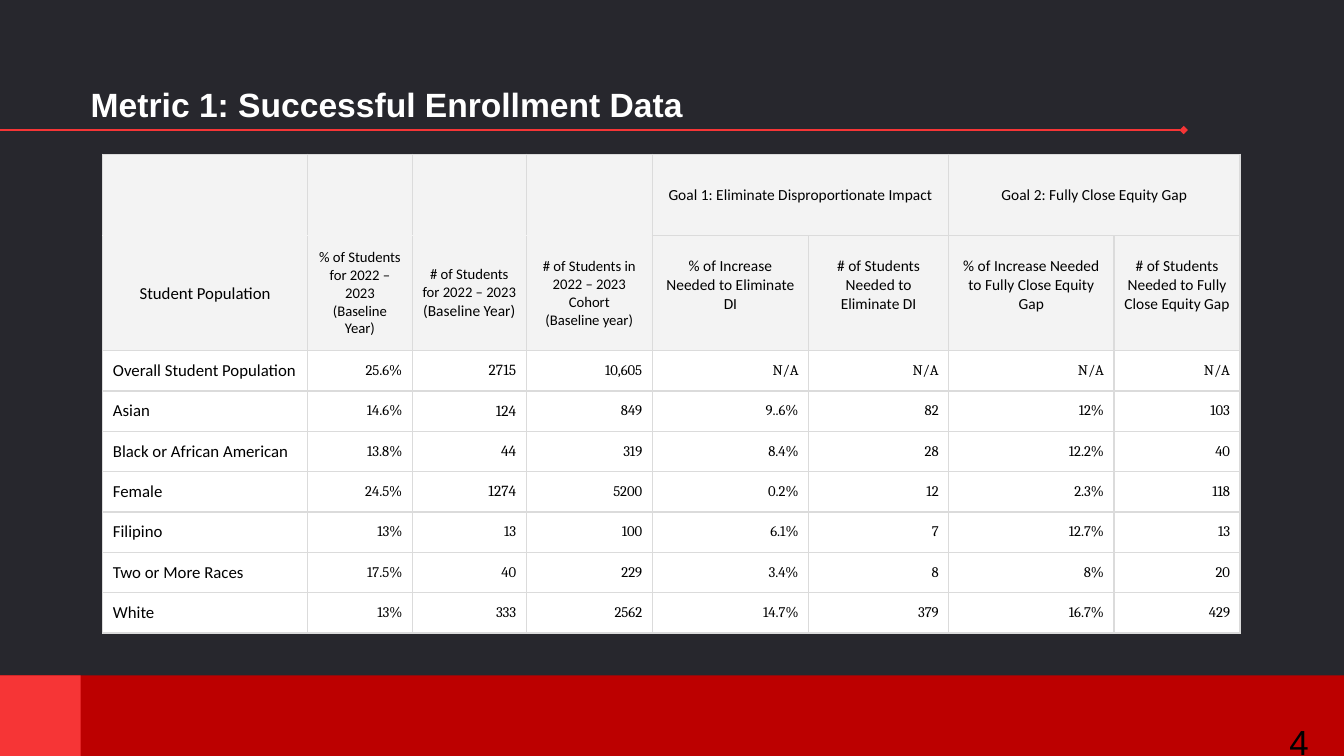
from lxml.etree import SubElement
from pptx import Presentation
from pptx.dml.color import RGBColor
from pptx.enum.shapes import MSO_CONNECTOR, MSO_SHAPE
from pptx.enum.text import MSO_ANCHOR, MSO_AUTO_SIZE, PP_ALIGN
from pptx.oxml.ns import qn
from pptx.util import Inches, Pt

SLIDE_COLUMNS, SLIDE_ROWS = 133.3, 75
FOOTER_TOP, FOOTER_ROWS = 67, 8
RULE_ROW = 12.9
TABLE_LEFT, TABLE_TOP = 10.2, 15.3
COLUMN_WIDTHS = [20.3, 10.4, 11.3, 12.5, 15.5, 13.9, 16.4, 12.5]
ROW_HEIGHTS = [8.1, 11.4] + [4] * 7
FIRST_GOAL_COLUMN = 4
HEADER_FILL, BORDER = "F3F3F3", "DBDBDB"

GOALS = {
    4: "Goal 1: Eliminate Disproportionate Impact",
    6: "Goal 2: Fully Close Equity Gap",
}
HEADERS = [
    [("Student Population", 12)],
    [("% of Students for 2022 – 2023 (Baseline Year)", 10.5)],
    [("# of Students for 2022 – 2023", 10.5), ("(Baseline Year)", 11)],
    [("# of Students in 2022 – 2023 Cohort", 10.5), ("(Baseline year)", 10.5)],
    [("% of Increase Needed to Eliminate DI", 11)],
    [("# of Students Needed to Eliminate DI", 11)],
    [("% of Increase Needed to Fully Close Equity Gap", 11)],
    [("# of Students Needed to Fully Close Equity Gap", 11)],
]
POPULATIONS = [
    ["Overall Student Population", "25.6%", "2715", "10,605", "N/A", "N/A", "N/A", "N/A"],
    ["Asian", "14.6%", "124", "849", "9..6%", "82", "12%", "103"],
    ["Black or African American", "13.8%", "44", "319", "8.4%", "28", "12.2%", "40"],
    ["Female", "24.5%", "1274", "5200", "0.2%", "12", "2.3%", "118"],
    ["Filipino", "13%", "13", "100", "6.1%", "7", "12.7%", "13"],
    ["Two or More Races", "17.5%", "40", "229", "3.4%", "8", "8%", "20"],
    ["White", "13%", "333", "2562", "14.7%", "379", "16.7%", "429"],
]


def grid(*steps):
    """Turn steps of a tenth of an inch into lengths."""
    return [Inches(step / 10) for step in steps]


def paint(target, color):
    """Give a fill or line a solid colour from a hex string."""
    target.solid()
    target.fore_color.rgb = RGBColor.from_string(color)


def write(para, text, size=11, font="Calibri", color="000000", bold=False, align=PP_ALIGN.LEFT):
    """Add formatted text to a paragraph."""
    para.alignment = align
    span = para.add_run()
    span.text = text
    span.font.name = font
    span.font.size = Pt(size)
    span.font.bold = bold
    paint(span.font.fill, color)


def set_frame(frame, anchor):
    """Set the insets, wrapping and anchor of a text frame."""
    frame.margin_left = frame.margin_right = frame.margin_top = frame.margin_bottom = Inches(0.1)
    frame.word_wrap = True
    frame.auto_size = MSO_AUTO_SIZE.NONE
    frame.vertical_anchor = anchor


def add_bar(page, left, width, color):
    """Draw a filled block in the footer."""
    bar = page.shapes.add_shape(
        MSO_SHAPE.RECTANGLE, *grid(left, FOOTER_TOP, width, FOOTER_ROWS))
    bar.shadow.inherit = False
    paint(bar.fill, color)
    bar.line.fill.background()


def add_rule(page):
    """Draw the title rule with its diamond end."""
    rule = page.shapes.add_connector(
        MSO_CONNECTOR.STRAIGHT, *grid(0, RULE_ROW, 117.4, RULE_ROW))
    paint(rule.line.fill, "F63536")
    rule.line.width = Pt(1.5)
    properties = rule.line.fill._xPr
    SubElement(properties, qn("a:tailEnd"), type="diamond")
    SubElement(properties.getparent(), qn("a:effectLst"))


def add_title(page, text):
    """Place and format the title."""
    title = page.shapes.title
    title.left, title.top, title.width, title.height = grid(8, 5.3, 109.3, 8)
    set_frame(title.text_frame, MSO_ANCHOR.BOTTOM)
    write(title.text_frame.paragraphs[0], text, size=24, font="Arial", color="FFFFFF", bold=True)


def add_page_number(page, number):
    """Write the page number in the bottom corner."""
    box = page.shapes.add_textbox(*grid(126.9, 72.2, 6.4, 2.8))
    set_frame(box.text_frame, MSO_ANCHOR.MIDDLE)
    write(box.text_frame.paragraphs[0], number, size=24.9, font="Arial")


def style_cell(cell, row, column):
    """Fill and outline a cell, hiding the seam inside tall headers."""
    header = row < 2
    borders = dict.fromkeys(["lnL", "lnR", "lnT", "lnB"], BORDER)
    if header and column < FIRST_GOAL_COLUMN:
        borders["lnT" if row else "lnB"] = HEADER_FILL
    properties = cell._tc.get_or_add_tcPr()
    for side, color in borders.items():
        line = SubElement(properties, qn(f"a:{side}"), w=str(Pt(1)))
        SubElement(SubElement(line, qn("a:solidFill")), qn("a:srgbClr"), val=color)
    paint(cell.fill, HEADER_FILL if header else "FFFFFF")
    cell.vertical_anchor = MSO_ANCHOR.MIDDLE
    if row == 1 and column >= FIRST_GOAL_COLUMN:
        cell.margin_bottom = Inches(0.21)


def fill_headers(table):
    """Write the goal row and the column headings."""
    for column, goal in GOALS.items():
        table.cell(0, column).merge(table.cell(0, column + 1))
        write(table.cell(0, column).text_frame.paragraphs[0], goal, align=PP_ALIGN.CENTER)
    for column, lines in enumerate(HEADERS):
        frame = table.cell(1, column).text_frame
        for index, (text, size) in enumerate(lines):
            para = frame.add_paragraph() if index else frame.paragraphs[0]
            write(para, text, size=size, align=PP_ALIGN.CENTER)


def fill_populations(table):
    """Write one row of figures for each population."""
    for row, (name, *figures) in enumerate(POPULATIONS, start=2):
        write(table.cell(row, 0).text_frame.paragraphs[0], name, size=12)
        for column, figure in enumerate(figures, start=1):
            size = 11 if column == 2 and row < 6 else 10.5
            write(table.cell(row, column).text_frame.paragraphs[0], figure,
                  size=size, font="Cambria", align=PP_ALIGN.RIGHT)


def add_enrollment_table(page):
    """Build the enrollment table."""
    table = page.shapes.add_table(
        len(ROW_HEIGHTS), len(COLUMN_WIDTHS),
        *grid(TABLE_LEFT, TABLE_TOP, sum(COLUMN_WIDTHS), sum(ROW_HEIGHTS))).table
    table.first_row = table.horz_banding = False
    for column, width in zip(table.columns, grid(*COLUMN_WIDTHS)):
        column.width = width
    for row, height in zip(table.rows, grid(*ROW_HEIGHTS)):
        row.height = height
    for row in range(len(ROW_HEIGHTS)):
        for column in range(len(COLUMN_WIDTHS)):
            style_cell(table.cell(row, column), row, column)
    fill_headers(table)
    fill_populations(table)


def main():
    """Build and save the slide."""
    deck = Presentation()
    deck.slide_width, deck.slide_height = grid(SLIDE_COLUMNS, SLIDE_ROWS)
    page = deck.slides.add_slide(deck.slide_layouts.get_by_name("Title Only"))
    paint(page.background.fill, "27272D")
    add_rule(page)
    add_bar(page, 0, SLIDE_COLUMNS, "BC0000")
    add_bar(page, 0, FOOTER_ROWS, "F63536")
    add_title(page, "Metric 1: Successful Enrollment Data")
    add_page_number(page, "4")
    add_enrollment_table(page)
    deck.save("out.pptx")


if __name__ == "__main__":
    main()
